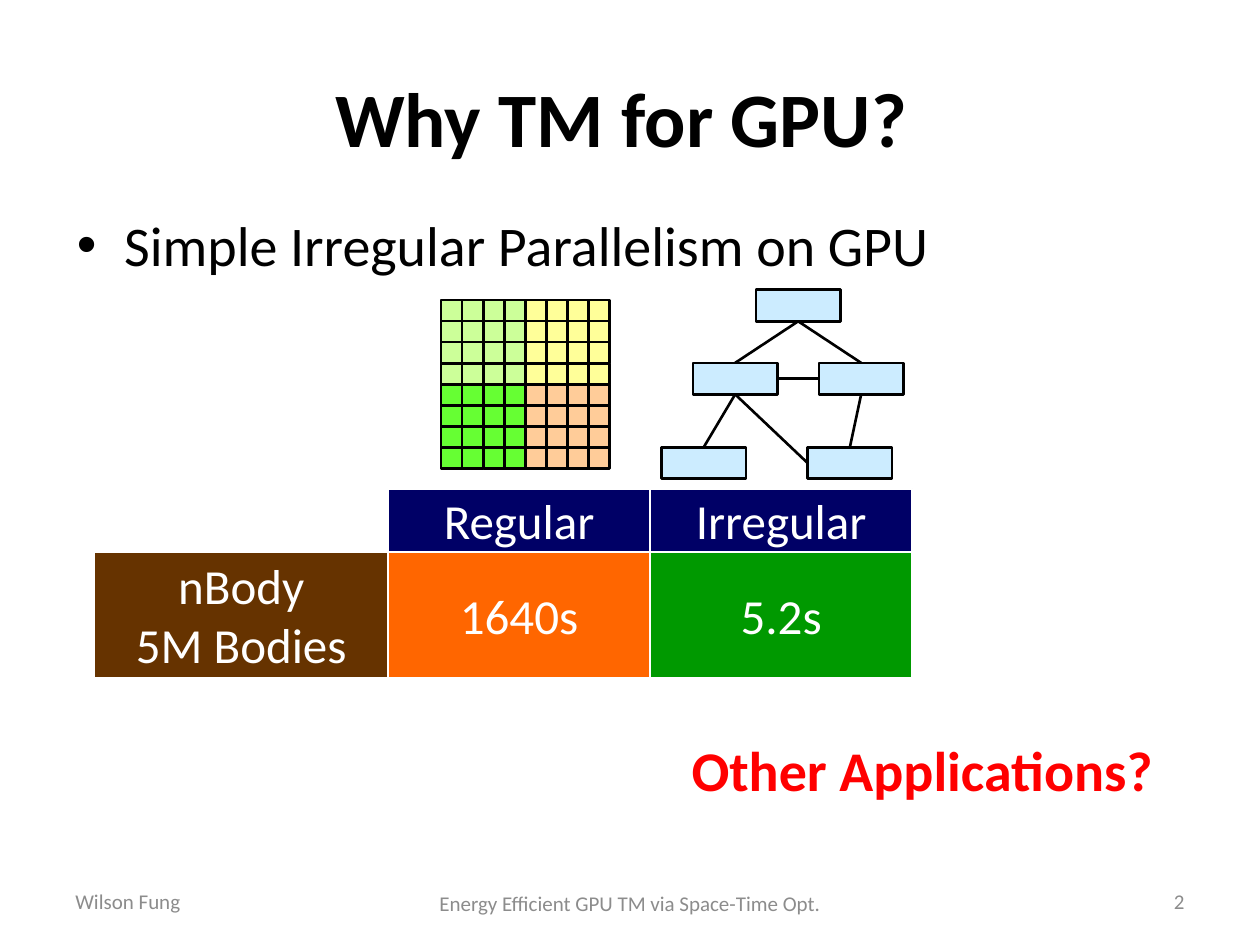
from pptx import Presentation
from pptx.dml.color import RGBColor
from pptx.enum.shapes import MSO_CONNECTOR, MSO_SHAPE
from pptx.enum.text import MSO_ANCHOR, PP_ALIGN
from pptx.oxml.ns import qn
from pptx.util import Inches, Pt

BLACK = RGBColor(0x00, 0x00, 0x00)
WHITE = RGBColor(0xFF, 0xFF, 0xFF)
GRAY = RGBColor(0x8C, 0x8C, 0x8C)
RED = RGBColor(0xFF, 0x00, 0x00)
NAVY = RGBColor(0x00, 0x00, 0x66)
BROWN = RGBColor(0x66, 0x33, 0x00)
ORANGE = RGBColor(0xFF, 0x66, 0x00)
GREEN = RGBColor(0x00, 0x99, 0x00)
PALE_BLUE = RGBColor(0xCC, 0xEC, 0xFF)
PALE_GREEN = RGBColor(0xCC, 0xFF, 0x99)
PALE_YELLOW = RGBColor(0xFF, 0xFF, 0x99)
BRIGHT_GREEN = RGBColor(0x66, 0xFF, 0x33)
PEACH = RGBColor(0xFF, 0xCC, 0x99)

TOP, LEFT, BOTTOM, RIGHT = range(4)


def write(shape, text, size=28, color=BLACK, bold=False, align=PP_ALIGN.CENTER,
          anchor=MSO_ANCHOR.MIDDLE, wrap=True):
    """Fill the shape with one paragraph per line of text."""
    frame = shape.text_frame
    frame.text = text
    frame.word_wrap = wrap
    frame.vertical_anchor = anchor
    for para in frame.paragraphs:
        para.alignment = align
        for span in para.runs:
            span.font.name = "Calibri"
            span.font.size = Pt(size)
            span.font.bold = bold
            span.font.color.rgb = color


def add_box(left, top, width, height, fill, line=BLACK, weight=1.5):
    box = page.shapes.add_shape(MSO_SHAPE.RECTANGLE, Inches(left), Inches(top),
                                Inches(width), Inches(height))
    box.shadow.inherit = False
    box.fill.solid()
    box.fill.fore_color.rgb = fill
    box.line.color.rgb = line
    box.line.width = Pt(weight)
    return box


deck = Presentation()
deck.slide_width, deck.slide_height = Inches(10), Inches(7.5)
page = deck.slides.add_slide(deck.slide_layouts[1])

# Title and bullet
title, body = page.placeholders
title.left, title.top, title.width, title.height = map(Inches, (0.5, 0.3, 9, 1.25))
write(title, "Why TM for GPU? ", size=44, bold=True)
body.left, body.top, body.width, body.height = map(Inches, (0.51, 1.62, 9, 0.58))
write(body, "Simple Irregular Parallelism on GPU", size=32,
      align=PP_ALIGN.LEFT, anchor=MSO_ANCHOR.TOP)

# Timing comparison
for text, left, top, width, height, fill in [
    ("nBody\n5M Bodies", 0.75, 4.38, 2.33, 1, BROWN),
    ("1640s", 3.08, 4.38, 2.08, 1, ORANGE),
    ("5.2s", 5.16, 4.38, 2.08, 1, GREEN),
    ("Regular", 3.08, 3.88, 2.08, 0.5, NAVY),
    ("Irregular", 5.16, 3.88, 2.08, 0.5, NAVY),
]:
    cell = add_box(left, top, width, height, fill, line=WHITE, weight=1)
    write(cell, text, color=WHITE, wrap=False)

# Irregular data: a graph
nodes = {
    name: add_box(left, top, 0.67, 0.25, PALE_BLUE)
    for name, left, top in [
        ("root", 6, 2.3),
        ("left", 5.5, 2.88),
        ("right", 6.5, 2.88),
        ("left leaf", 5.25, 3.55),
        ("right leaf", 6.41, 3.55),
    ]
}
for start, start_side, end, end_side in [
    ("root", BOTTOM, "left", TOP),
    ("left", BOTTOM, "left leaf", TOP),
    ("root", BOTTOM, "right", TOP),
    ("left", RIGHT, "right", LEFT),
    ("right", BOTTOM, "right leaf", TOP),
    ("right leaf", LEFT, "left", BOTTOM),
]:
    edge = page.shapes.add_connector(MSO_CONNECTOR.STRAIGHT, 0, 0, 0, 0)
    edge.begin_connect(nodes[start], start_side)
    edge.end_connect(nodes[end], end_side)
    edge.line.color.rgb = BLACK
    edge.line.width = Pt(1.5)
    properties = edge._element.spPr
    properties.append(properties.makeelement(qn("a:effectLst"), {}))

# Regular data: an 8 by 8 grid with one colour per quadrant
QUADRANTS = [[PALE_GREEN, PALE_YELLOW], [BRIGHT_GREEN, PEACH]]
pitch = 1.34 / 8
for row in range(8):
    for column in range(8):
        add_box(3.5 + column * pitch, 2.38 + row * pitch, pitch, pitch,
                QUADRANTS[row // 4][column // 4])

# Footer and closing question
footer = dict(size=12, color=GRAY)
for text, left, top, width, height, style in [
    ("2", 7.17, 6.95, 2.33, 0.4, dict(footer, align=PP_ALIGN.RIGHT)),
    ("Energy Efficient GPU TM via Space-Time Opt.", 3.19, 6.98, 3.62, 0.37, footer),
    ("Wilson Fung", 0.5, 6.95, 2.33, 0.4, dict(footer, align=PP_ALIGN.LEFT)),
    ("Other Applications?", 5.39, 5.79, 3.9, 0.64,
     dict(size=32, color=RED, bold=True, align=PP_ALIGN.LEFT,
          anchor=MSO_ANCHOR.TOP, wrap=False)),
]:
    label = page.shapes.add_textbox(Inches(left), Inches(top), Inches(width), Inches(height))
    write(label, text, **style)

deck.save("out.pptx")
